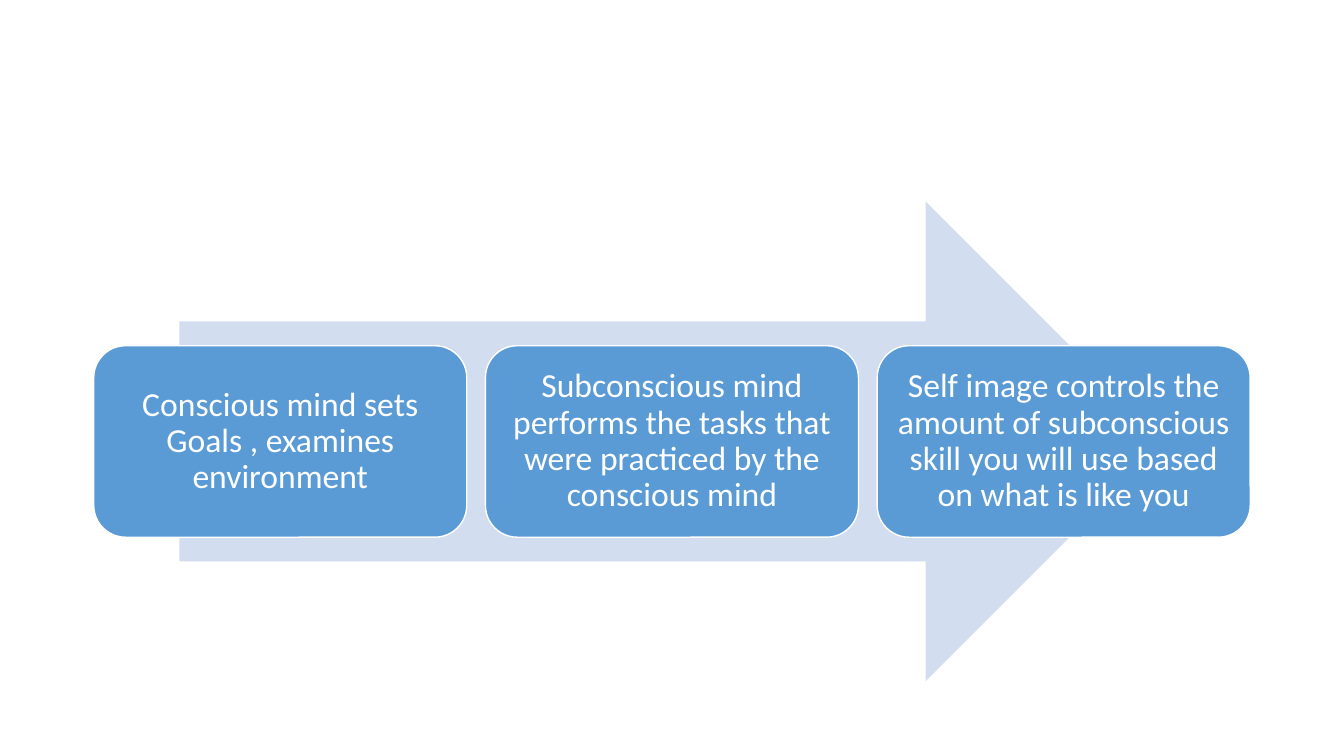
"""Build a slide with three mind stages lined up along a wide arrow."""
from pptx import Presentation
from pptx.dml.color import RGBColor
from pptx.enum.shapes import MSO_SHAPE
from pptx.enum.text import MSO_ANCHOR, PP_ALIGN
from pptx.util import Inches, Pt

STAGES = [
    "Conscious mind sets Goals , examines environment",
    "Subconscious mind performs the tasks that were practiced by the conscious mind",
    "Self image controls the amount of subconscious skill you will use based on what is like you",
]
ARROW = (1.78, 2, 9.78, 4.76)
ARROW_COLOR, STAGE_COLOR, WHITE = "D2DEEF", "5B9BD5", "FFFFFF"
STAGE_LEFT, STAGE_WIDTH, STAGE_HEIGHT, STAGE_STEP = 0.93, 3.7, 1.9, 3.885


def color(value):
    return RGBColor.from_string(value)


def add_shape(slide, kind, box, fill, line=None):
    shape = slide.shapes.add_shape(kind, *(Inches(length) for length in box))
    shape.shadow.inherit = False
    shape.fill.solid()
    shape.fill.fore_color.rgb = color(fill)
    if line:
        shape.line.color.rgb = color(line)
        shape.line.width = Pt(1)
    else:
        shape.line.fill.background()
    return shape


def write_text(shape, text, size=24, font="Calibri", text_color=WHITE, inset=0.1):
    frame = shape.text_frame
    frame.word_wrap = True
    frame.vertical_anchor = MSO_ANCHOR.MIDDLE
    frame.margin_left = frame.margin_right = Inches(inset)
    frame.margin_top = frame.margin_bottom = Inches(inset)
    paragraph = frame.paragraphs[0]
    paragraph.alignment = PP_ALIGN.CENTER
    paragraph.line_spacing = 0.9
    run = paragraph.add_run()
    run.text = text
    run.font.name = font
    run.font.size = Pt(size)
    run.font.color.rgb = color(text_color)


def main():
    presentation = Presentation()
    presentation.slide_width = Inches(13.33)
    presentation.slide_height = Inches(7.5)
    slide = presentation.slides.add_slide(presentation.slide_layouts[6])

    add_shape(slide, MSO_SHAPE.RIGHT_ARROW, ARROW, ARROW_COLOR)
    stage_top = ARROW[1] + (ARROW[3] - STAGE_HEIGHT) / 2
    for index, text in enumerate(STAGES):
        box = (STAGE_LEFT + index * STAGE_STEP, stage_top, STAGE_WIDTH, STAGE_HEIGHT)
        stage = add_shape(slide, MSO_SHAPE.ROUNDED_RECTANGLE, box, STAGE_COLOR, WHITE)
        write_text(stage, text)

    presentation.save("out.pptx")


if __name__ == "__main__":
    main()
